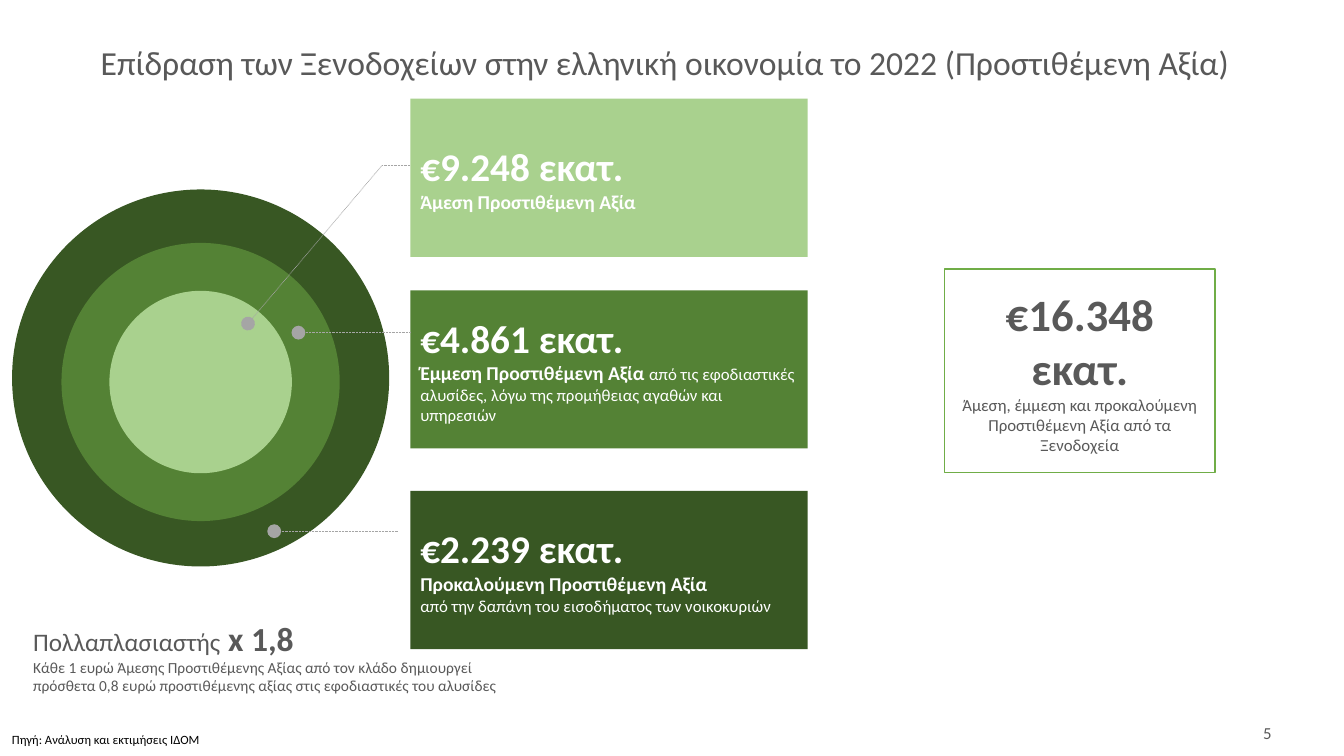
import pptx
import pptx.util
import pptx.dml.color
import pptx.enum.dml
import pptx.enum.shapes
import pptx.enum.text
import pptx.oxml.ns
import lxml.etree

GREY, WHITE, POINTER = "595959", "FFFFFF", "A5A5A5"
LIGHT, MEDIUM, DARK = "A9D18E", "548235", "385723"
ALIGN = pptx.enum.text.PP_ALIGN
ANCHOR = pptx.enum.text.MSO_ANCHOR
SHAPES = pptx.enum.shapes.MSO_SHAPE

# Text is a list of paragraphs, each a list of (text, size, bold) runs.
TITLE = [[("Επίδραση των Ξενοδοχείων στην ελληνική οικονομία το 2022 (Προστιθέμενη Αξία)", 24, False)]]
EFFECTS = [
    (LIGHT, 0.98, [
        [("€9.248 εκατ.", 28, True)],
        [("Άμεση Προστιθέμενη Αξία", 14, True)],
    ]),
    (MEDIUM, 2.88, [
        [("€4.861 εκατ.", 28, True)],
        [("Έμμεση Προστιθέμενη Αξία ", 14, True),
         ("από τις εφοδιαστικές αλυσίδες, λόγω της προμήθειας αγαθών και υπηρεσιών", 12, False)],
    ]),
    (DARK, 4.87, [
        [("€2.239 εκατ.", 28, True)],
        [("Προκαλούμενη Προστιθέμενη Αξία", 14, True)],
        [("από την δαπάνη του εισοδήματος των νοικοκυριών", 12, False)],
    ]),
]
TOTAL = [
    [("€16.348 εκατ.", 32, True)],
    [("Άμεση, έμμεση και προκαλούμενη Προστιθέμενη Αξία από τα Ξενοδοχεία", 12, False)],
]
MULTIPLIER = [
    [("Πολλαπλασιαστής", 18, False), (" ", 24, False), ("x 1,8", 24, True)],
    [("Κάθε 1 ευρώ Άμεσης Προστιθέμενης Αξίας από τον κλάδο δημιουργεί πρόσθετα 0,8 ευρώ "
      "προστιθέμενης αξίας στις εφοδιαστικές του αλυσίδες", 11, False)],
]
SOURCE = [[("Πηγή: Ανάλυση και εκτιμήσεις ΙΔΟΜ", 9, False)]]
PAGE = [[("5", 12, False)]]

CENTRE_X = 1.99
RINGS = [(DARK, 3.74, 3.75), (MEDIUM, 2.76, 3.79), (LIGHT, 1.81, 3.79)]  # colour, diameter, centre y
BOX_LEFT, BOX_WIDTH, BOX_HEIGHT = 4.07, 3.94, 1.57
BEND = (3.79, 1.64)
DIRECT_POINTER = [((2.46, 3.21), BEND, True), (BEND, (4.53, 1.64), False)]  # start, end, dot
OTHER_POINTERS = [((2.96, 3.3), (BOX_LEFT, 3.3), True), ((2.72, 5.27), (3.95, 5.27), True)]


def inches(*lengths):
    return [pptx.util.Inches(length) for length in lengths]


def rgb(colour):
    return pptx.dml.color.RGBColor.from_string(colour)


def write(shape, paragraphs, colour=GREY, align=ALIGN.LEFT, anchor=ANCHOR.MIDDLE, spacing=1.0):
    frame = shape.text_frame
    frame.word_wrap = True
    frame.vertical_anchor = anchor
    for index, runs in enumerate(paragraphs):
        paragraph = frame.add_paragraph() if index else frame.paragraphs[0]
        paragraph.alignment = align
        paragraph.line_spacing = spacing
        for text, size, bold in runs:
            run = paragraph.add_run()
            run.text = text
            run.font.name = "Calibri"
            run.font.size = pptx.util.Pt(size)
            run.font.bold = bold
            run.font.color.rgb = rgb(colour)


def add_text(slide, box, paragraphs, **text_format):
    write(slide.shapes.add_textbox(*inches(*box)), paragraphs, **text_format)


def add_filled(slide, kind, box, fill, outline=None):
    shape = slide.shapes.add_shape(kind, *inches(*box))
    shape.shadow.inherit = False
    shape.fill.solid()
    shape.fill.fore_color.rgb = rgb(fill)
    if outline:
        shape.line.color.rgb = rgb(outline)
        shape.line.width = pptx.util.Pt(1)
    else:
        shape.line.fill.background()
    return shape


def add_pointer(slide, start, end, dot):
    """Draw a dotted line, with a round dot at its start if asked."""
    straight = pptx.enum.shapes.MSO_CONNECTOR.STRAIGHT
    connector = slide.shapes.add_connector(straight, *inches(*start, *end))
    connector.line.color.rgb = rgb(POINTER)
    connector.line.width = pptx.util.Pt(0.5)
    connector.line.dash_style = pptx.enum.dml.MSO_LINE.ROUND_DOT
    qualified = pptx.oxml.ns.qn
    properties = connector._element.find(qualified("p:spPr"))
    if dot:
        outline = properties.find(qualified("a:ln"))
        lxml.etree.SubElement(outline, qualified("a:headEnd"), type="oval", w="lg", len="lg")
    lxml.etree.SubElement(properties, qualified("a:effectLst"))


def main():
    presentation = pptx.Presentation()
    presentation.slide_width, presentation.slide_height = inches(13.33, 7.5)
    slide = presentation.slides.add_slide(presentation.slide_layouts[6])

    add_text(slide, (0.9, 0.13, 12.3, 1.02), TITLE, spacing=0.9)
    add_text(slide, (9.6, 7.07, 3.11, 0.4), PAGE, align=ALIGN.RIGHT)
    for colour, diameter, centre_y in RINGS:
        box = (CENTRE_X - diameter / 2, centre_y - diameter / 2, diameter, diameter)
        add_filled(slide, SHAPES.OVAL, box, colour)
    for pointer in DIRECT_POINTER:
        add_pointer(slide, *pointer)
    for colour, top, paragraphs in EFFECTS:
        box = (BOX_LEFT, top, BOX_WIDTH, BOX_HEIGHT)
        write(add_filled(slide, SHAPES.RECTANGLE, box, colour), paragraphs, colour=WHITE)
    add_text(slide, (0.23, 6.04, 5.12, 0.94), MULTIPLIER)
    for pointer in OTHER_POINTERS:
        add_pointer(slide, *pointer)
    add_text(slide, (0.02, 7.21, 6.22, 0.25), SOURCE, colour="000000", anchor=ANCHOR.TOP)
    total = add_filled(slide, SHAPES.RECTANGLE, (9.37, 2.67, 2.68, 2.02), WHITE, outline="70AD47")
    write(total, TOTAL, align=ALIGN.CENTER)

    presentation.save("out.pptx")


if __name__ == "__main__":
    main()
